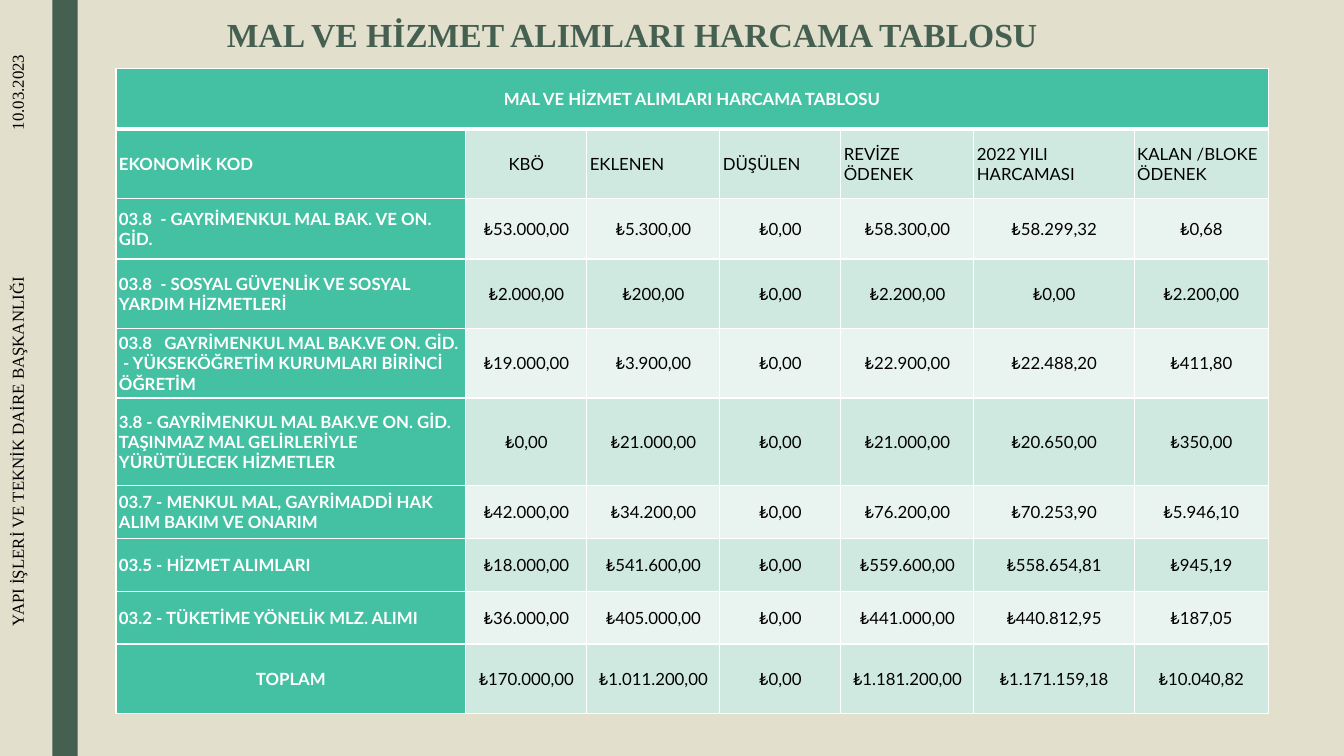
from lxml import etree
from pptx import Presentation
from pptx import util as u
from pptx.dml.color import RGBColor
from pptx.enum import shapes, text
from pptx.oxml import ns

SAND = RGBColor(0xE2, 0xDF, 0xCC)
PINE = RGBColor(0x45, 0x5F, 0x51)
TEAL = RGBColor(0x44, 0xC1, 0xA3)
MINT = RGBColor(0xCF, 0xE9, 0xE0)
PALE = RGBColor(0xE9, 0xF4, 0xF0)
WHITE = RGBColor(0xFF, 0xFF, 0xFF)
BLACK = RGBColor(0, 0, 0)
LEFT, MID = text.PP_ALIGN.LEFT, text.PP_ALIGN.CENTER

TITLE = "MAL VE HİZMET ALIMLARI HARCAMA TABLOSU"
COLS = [3.47, 1.2, 1.32, 1.2, 1.32, 1.59, 1.33]
TALL = [0.6, 0.69, 0.6, 0.69, 0.69, 0.87, 0.52, 0.53, 0.52, 0.69]
ROWS = [
    [TITLE] + [""] * 6,
    ["EKONOMİK KOD", "KBÖ", "EKLENEN", "DÜŞÜLEN", "REVİZE ÖDENEK",
     "2022 YILI HARCAMASI", "KALAN /BLOKE ÖDENEK"],
    ["03.8  - GAYRİMENKUL MAL BAK. VE ON. GİD.", "₺53.000,00", "₺5.300,00",
     "₺0,00", "₺58.300,00", "₺58.299,32", "₺0,68"],
    ["03.8  - SOSYAL GÜVENLİK VE SOSYAL YARDIM HİZMETLERİ", "₺2.000,00",
     "₺200,00", "₺0,00", "₺2.200,00", "₺0,00", "₺2.200,00"],
    ["03.8   GAYRİMENKUL MAL BAK.VE ON. GİD.  - YÜKSEKÖĞRETİM KURUMLARI BİRİNCİ ÖĞRETİM",
     "₺19.000,00", "₺3.900,00", "₺0,00", "₺22.900,00", "₺22.488,20", "₺411,80"],
    ["3.8 - GAYRİMENKUL MAL BAK.VE ON. GİD.\vTAŞINMAZ MAL GELİRLERİYLE YÜRÜTÜLECEK HİZMETLER",
     "₺0,00", "₺21.000,00", "₺0,00", "₺21.000,00", "₺20.650,00", "₺350,00"],
    ["03.7 - MENKUL MAL, GAYRİMADDİ HAK ALIM BAKIM VE ONARIM", "₺42.000,00",
     "₺34.200,00", "₺0,00", "₺76.200,00", "₺70.253,90", "₺5.946,10"],
    ["03.5 - HİZMET ALIMLARI", "₺18.000,00", "₺541.600,00", "₺0,00",
     "₺559.600,00", "₺558.654,81", "₺945,19"],
    ["03.2 - TÜKETİME YÖNELİK MLZ. ALIMI", "₺36.000,00", "₺405.000,00",
     "₺0,00", "₺441.000,00", "₺440.812,95", "₺187,05"],
    ["TOPLAM", "₺170.000,00", "₺1.011.200,00", "₺0,00", "₺1.181.200,00",
     "₺1.171.159,18", "₺10.040,82"],
]


def write(frame, words, align, face, size, color, bold):
    frame.text = words
    para = frame.paragraphs[0]
    para.alignment = align
    look = {"name": face, "size": u.Pt(size), "bold": bold}
    for run in para.runs:
        for key, val in look.items():
            setattr(run.font, key, val)
        run.font.color.rgb = color
    return para


def edge(cell, side, width):
    line = etree.SubElement(cell._tc.get_or_add_tcPr(), ns.qn("a:ln" + side),
                            w=str(u.Pt(width)))
    fill = etree.SubElement(line, ns.qn("a:solidFill"))
    etree.SubElement(fill, ns.qn("a:srgbClr"), val=str(WHITE))


deck = Presentation()
deck.slide_width, deck.slide_height = u.Inches(13.33), u.Inches(7.5)
slide = deck.slides.add_slide(deck.slide_layouts[6])
slide.background.fill.solid()
slide.background.fill.fore_color.rgb = SAND

bar = slide.shapes.add_shape(shapes.MSO_SHAPE.RECTANGLE, u.Inches(0.52), 0,
                             u.Inches(0.25), u.Inches(7.5))
bar.shadow.inherit = False
bar.fill.solid()
bar.fill.fore_color.rgb = PINE
bar.line.fill.background()

LABELS = [
    ("10.03.2023", (-0.55, 0.4, 1.54, 0.44), 270, LEFT, 12, BLACK, False),
    ("YAPI İŞLERİ VE TEKNİK DAİRE BAŞKANLIĞI", (-2.2, 3.86, 4.65, 0.25),
     270, LEFT, 12, BLACK, False),
    (TITLE, (1.02, 0.12, 10.5, 0.62), 0, MID, 24, PINE, True),
]
for words, spot, turn, align, size, color, bold in LABELS:
    box = slide.shapes.add_textbox(*map(u.Inches, spot))
    box.rotation = turn
    frame = box.text_frame
    frame.word_wrap = True
    frame.margin_top, frame.margin_bottom = u.Inches(0.07), 0
    para = write(frame, words, align, "Times New Roman", size, color, bold)
    para.line_spacing = 1.0 if turn else 0.89

grid = slide.shapes.add_table(len(ROWS), len(COLS), u.Inches(1.15), u.Inches(0.68),
                              u.Inches(11.43), u.Inches(6.38)).table
for col, wide in zip(grid.columns, COLS):
    col.width = u.Inches(wide)
for row, tall in zip(grid.rows, TALL):
    row.height = u.Inches(tall)

PAD = {"margin_left": u.Inches(0.03), "margin_right": u.Inches(0.03),
       "margin_top": 0, "margin_bottom": 0,
       "vertical_anchor": text.MSO_ANCHOR.MIDDLE}
for r, row in enumerate(ROWS):
    for c, words in enumerate(row):
        cell = grid.cell(r, c)
        for key, val in PAD.items():
            setattr(cell, key, val)
        for side in "LRTB":
            thick = (r, side) in ((0, "B"), (1, "T"))
            edge(cell, side, 3 if thick else 1)
        head = r == 0 or c == 0
        cell.fill.solid()
        cell.fill.fore_color.rgb = TEAL if head else MINT if r % 2 else PALE
        flush = c == 0 and 0 < r < len(ROWS) - 1 or r == 1 and c > 1
        write(cell.text_frame, words, LEFT if flush else MID, "Lato", 12,
              WHITE if head else BLACK, head)
grid.cell(0, 0).merge(grid.cell(0, len(COLS) - 1))

deck.save("out.pptx")
